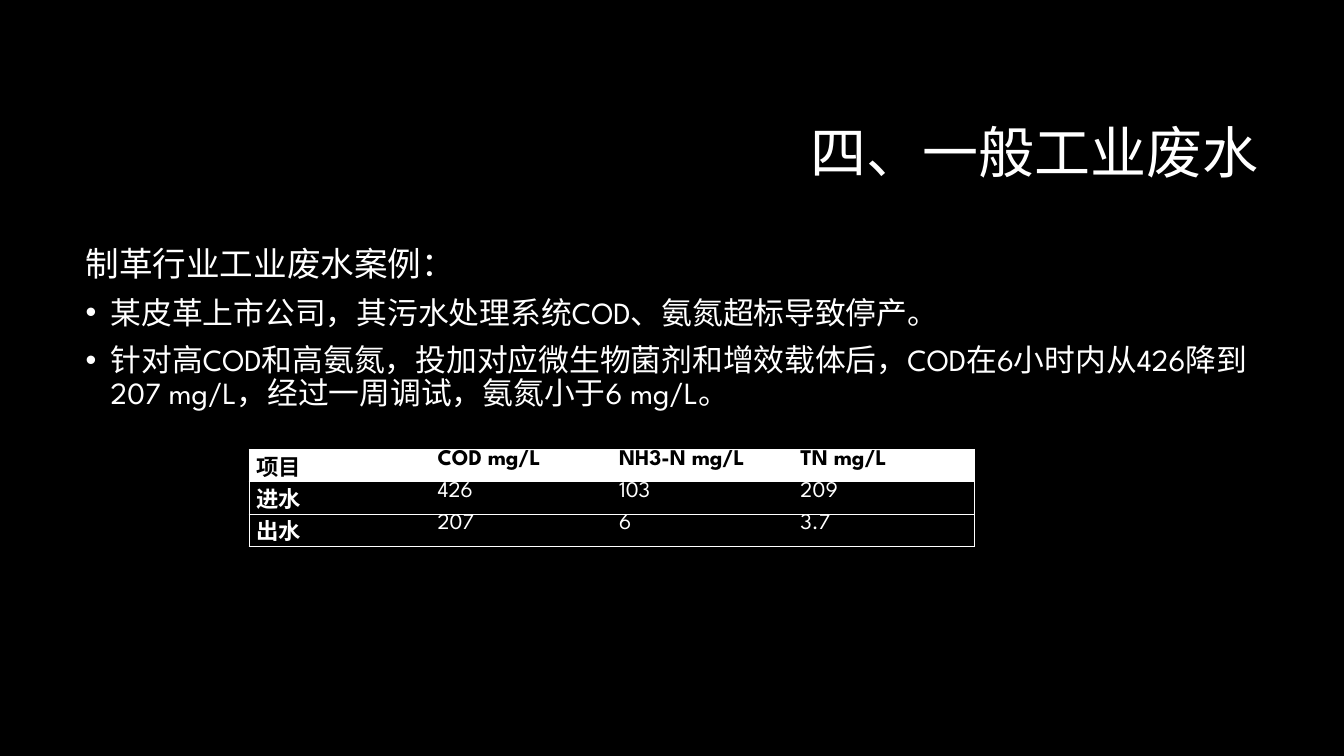
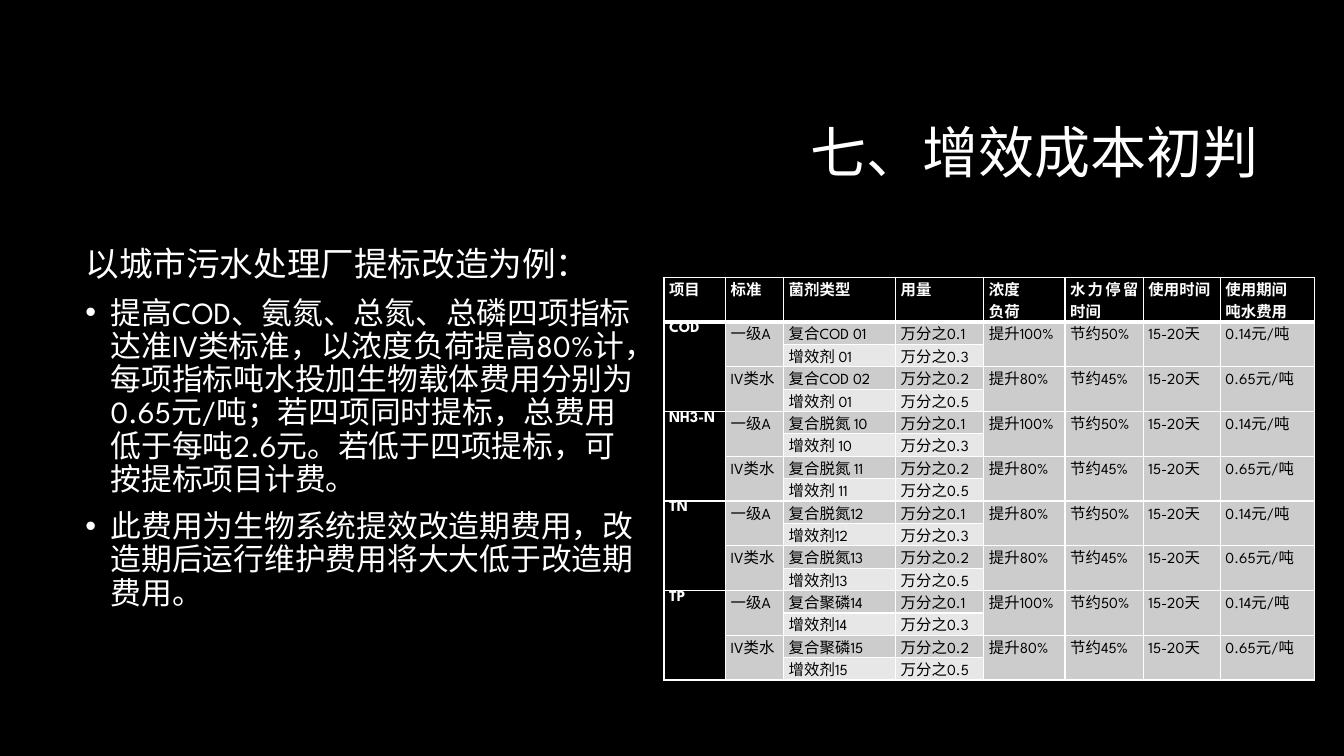
import pptx
import pptx.dml.color
import pptx.enum.text
import pptx.oxml
import pptx.oxml.ns
import pptx.util

Pt = pptx.util.Pt
Align = pptx.enum.text.PP_ALIGN
Anchor = pptx.enum.text.MSO_ANCHOR

BLACK, WHITE, GRAY, LIGHT_GRAY = "000000", "FFFFFF", "CCCCCC", "E7E7E7"


def rgb(value):
    return pptx.dml.color.RGBColor.from_string(value)


def add_xml(parent, tag, **attributes):
    element = pptx.oxml.parse_xml(f"<a:{tag} {pptx.oxml.ns.nsdecls('a')}/>")
    for key, value in attributes.items():
        element.set(key, str(value))
    parent.append(element)
    return element


class Deck:
    font_name = "League Spartan"
    margin = 54

    def __init__(self):
        self.presentation = pptx.Presentation()
        self.presentation.slide_width = Pt(960)
        self.presentation.slide_height = Pt(540)
        self.slide = None

    def style(self, paragraph, size, color=WHITE, bold=False):
        font = paragraph.font
        font.name = self.font_name
        font.size = Pt(size)
        font.bold = bold
        font.color.rgb = rgb(color)

    def add_slide(self, heading):
        self.slide = self.presentation.slides.add_slide(self.presentation.slide_layouts[5])
        background = self.slide.background.fill
        background.solid()
        background.fore_color.rgb = rgb(BLACK)
        title = self.slide.shapes.title
        title.left, title.top, title.width, title.height = Pt(228), Pt(60.5), Pt(678), Pt(101.5)
        frame = title.text_frame
        frame.text = heading
        frame.vertical_anchor = Anchor.MIDDLE
        paragraph = frame.paragraphs[0]
        paragraph.alignment = Align.RIGHT
        paragraph.line_spacing = 0.9
        self.style(paragraph, 40)

    def body(self, width, lead, points):
        box = self.slide.shapes.add_textbox(Pt(self.margin), Pt(173), Pt(width), Pt(317))
        frame = box.text_frame
        frame.word_wrap = True
        frame.text = "\n".join([lead, *points])
        for index, paragraph in enumerate(frame.paragraphs):
            paragraph.line_spacing = 0.9
            if index:
                paragraph.space_before = Pt(10)
                properties = paragraph._p.get_or_add_pPr()
                properties.set("marL", str(Pt(18)))
                properties.set("indent", str(-Pt(18)))
                add_xml(properties, "buFont", typeface="Arial")
                add_xml(properties, "buChar", char="•")
            self.style(paragraph, 22 if index else 24)

    def border(self, cell, sides):
        properties = cell._tc.get_or_add_tcPr()
        for side in "LRTB":
            width = sides[side]
            line = add_xml(properties, f"ln{side}", w=Pt(width))
            if width:
                add_xml(add_xml(line, "solidFill"), "srgbClr", val=WHITE)
            else:
                add_xml(line, "noFill")

    def table(self, left, top, widths, heights, rows, size, inset, look):
        frame = self.slide.shapes.add_table(
            len(rows), len(widths), Pt(left), Pt(top), Pt(sum(widths)), Pt(sum(heights)))
        table = frame.table
        table.first_row = table.horz_banding = False
        for column, width in zip(table.columns, widths):
            column.width = Pt(width)
        for row, height in zip(table.rows, heights):
            row.height = Pt(height)
        for r, row in enumerate(rows):
            for c, content in enumerate(row):
                cell = table.cell(r, c)
                cell.margin_left = cell.margin_right = Pt(inset)
                cell.margin_top = cell.margin_bottom = 0
                fill, color, bold, sides = look(r, c)
                self.border(cell, sides)
                cell.fill.solid()
                cell.fill.fore_color.rgb = rgb(fill)
                if content is not None:
                    cell.text = content
                for paragraph in cell.text_frame.paragraphs:
                    paragraph.alignment = Align.JUSTIFY
                    self.style(paragraph, size, color, bold)
        for c in range(len(widths)):
            starts = [r for r, row in enumerate(rows) if row[c] is not None]
            for start, following in zip(starts, starts[1:] + [len(rows)]):
                if following - start > 1:
                    table.cell(start, c).merge(table.cell(following - 1, c))


def results_look(r, c):
    sides = {"L": 0.75 * (c == 0), "R": 0.75 * (c == 3), "T": 0.75, "B": 0.75}
    if r == 0:
        return WHITE, BLACK, True, sides
    return BLACK, WHITE, c == 0, sides


def costs_look(r, c):
    sides = {"L": 1, "R": 1, "T": 3 if r == 1 else 1, "B": 3 if r == 0 else 1}
    if r == 0 or c == 0:
        return BLACK, WHITE, True, sides
    return (LIGHT_GRAY if c in (2, 3) and r % 2 == 0 else GRAY), BLACK, False, sides


def cost_rows():
    grades = [
        ("一级A", "万分之0.1", "万分之0.3", "节约50%", "0.14元/吨"),
        ("IV类水", "万分之0.2", "万分之0.5", "节约45%", "0.65元/吨"),
    ]
    pollutants = {
        "COD": [("复合COD 01", "增效剂 01", "提升100%"), ("复合COD 02", "增效剂 01", "提升80%")],
        "NH3-N": [("复合脱氮 10", "增效剂 10", "提升100%"), ("复合脱氮 11", "增效剂 11", "提升80%")],
        "TN": [("复合脱氮12", "增效剂12", "提升80%"), ("复合脱氮13", "增效剂13", "提升80%")],
        "TP": [("复合聚磷14", "增效剂14", "提升100%"), ("复合聚磷15", "增效剂15", "提升80%")],
    }
    rows = [["项目", "标准", "菌剂类型", "用量", "浓度\n负荷", "水力停留时间", "使用时间", "使用期间\n吨水费用"]]
    for pollutant, agents in pollutants.items():
        label = pollutant
        for (grade, dose, booster_dose, saving, cost), (agent, booster, load) in zip(grades, agents):
            rows.append([label, grade, agent, dose, load, saving, "15-20天", cost])
            rows.append([None, None, booster, booster_dose, None, None, None, None])
            label = None
    return rows


def main():
    deck = Deck()

    deck.add_slide("四、一般工业废水")
    deck.body(852, "制革行业工业废水案例：", [
        "某皮革上市公司，其污水处理系统COD、氨氮超标导致停产。",
        "针对高COD和高氨氮，投加对应微生物菌剂和增效载体后，COD在6小时内从426降到207 mg/L，经过一周调试，氨氮小于6 mg/L。",
    ])
    results = [
        ["项目", "COD mg/L", "NH3-N mg/L", "TN mg/L"],
        ["进水", "426", "103", "209"],
        ["出水", "207", "6", "3.7"],
    ]
    deck.table(178, 321, [129.6] * 4, [23.1] * 3, results, 16, 5, results_look)

    deck.add_slide("七、增效成本初判")
    deck.body(410.5, "以城市污水处理厂提标改造为例：", [
        "提高COD、氨氮、总氮、总磷四项指标达准IV类标准，以浓度负荷提高80%计，每项指标吨水投加生物载体费用分别为0.65元/吨；"
        "若四项同时提标，总费用低于每吨2.6元。若低于四项提标，可按提标项目计费。",
        "此费用为生物系统提效改造期费用，改造期后运行维护费用将大大低于改造期费用。",
    ])
    deck.table(474.3, 198, [44, 41.5, 80, 63, 58, 56, 55, 67], [32] + [16] * 16,
               cost_rows(), 11, 3.6, costs_look)

    deck.presentation.save("out.pptx")


if __name__ == "__main__":
    main()
